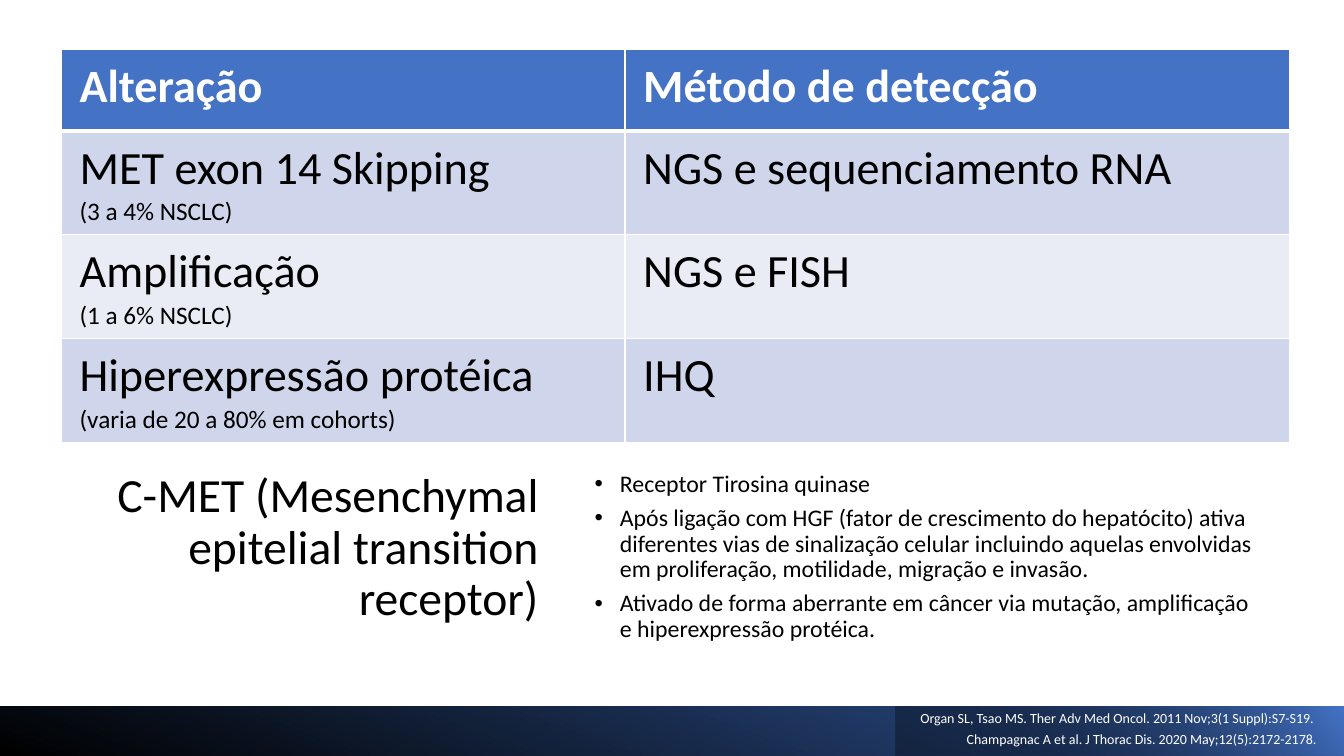
"""Build the C-MET alterations and detection methods slide."""
from dataclasses import dataclass

from lxml.etree import SubElement
from pptx import Presentation
from pptx.dml.color import RGBColor
from pptx.enum.shapes import MSO_SHAPE as Shape
from pptx.enum.text import MSO_AUTO_SIZE as AutoSize, PP_ALIGN as Align
from pptx.oxml import parse_xml
from pptx.oxml.ns import nsdecls, qn
from pptx.util import Inches, Pt


@dataclass(frozen=True)
class Theme:
    font: str = "Calibri"
    black: str = "000000"
    white: str = "FFFFFF"
    blue: str = "4472C4"
    navy: str = "2F5597"
    bands: tuple = ("CFD5EA", "E9EBF5")
    title: int = 34
    table: int = 33
    note: int = 18
    body: int = 17
    citation: int = 10


theme = Theme()


def write(frame, lines, paragraph_format, bullet=None):
    """Fill a text frame with (text, size, color, bold) lines."""
    for index, (text, size, color, bold) in enumerate(lines):
        paragraph = frame.paragraphs[0] if index == 0 else frame.add_paragraph()
        paragraph.text = text
        for name, value in paragraph_format.items():
            setattr(paragraph, name, value)
        if bullet:
            properties = paragraph._p.get_or_add_pPr()
            properties.set("marL", str(Inches(0.31)))
            properties.set("indent", str(Inches(-0.25)))
            SubElement(properties, qn("a:buFont")).set("typeface", "Arial")
            SubElement(properties, qn("a:buChar")).set("char", bullet)
        font = paragraph.runs[0].font
        for name, value in {"name": theme.font, "size": Pt(size), "bold": bold}.items():
            setattr(font, name, value)
        font.color.rgb = RGBColor.from_string(color)


def add_text(box, lines, paragraph_format, bullet=None, auto_size=AutoSize.NONE):
    """Add a wrapped text box at (left, top, width, height)."""
    frame = slide.shapes.add_textbox(*map(Inches, box)).text_frame
    frame.word_wrap = True
    frame.auto_size = auto_size
    write(frame, lines, paragraph_format, bullet)


presentation = Presentation()
presentation.slide_width = Inches(13.33)
presentation.slide_height = Inches(7.5)
slide = presentation.slides.add_slide(presentation.slide_layouts[6])

spaced = {"space_after": Pt(6)}
tight = {"line_spacing": 0.9, **spaced}
add_text(
    (0.9, 4.63, 4.54, 1.97),
    [("C-MET (Mesenchymal epitelial transition receptor)", theme.title, theme.black, False)],
    {"alignment": Align.RIGHT, **tight},
)
facts = [
    "Receptor Tirosina quinase",
    "Após ligação com HGF (fator de crescimento do hepatócito) ativa diferentes vias de "
    "sinalização celular incluindo aquelas envolvidas em proliferação, motilidade, migração e invasão.",
    "Ativado de forma aberrante em câncer via mutação, amplificação e hiperexpressão protéica.",
]
add_text(
    (5.74, 4.63, 6.82, 1.97),
    [(fact, theme.body, theme.black, False) for fact in facts],
    tight,
    bullet="•",
)

footer_bars = [
    (0, 13.33, 110, [(0, theme.black, 100), (1, theme.navy, 100)]),
    (8.88, 4.45, 140, [(0.19, theme.black, 31), (0.99, theme.blue, 100)]),
]
for left, width, angle, stops in footer_bars:
    bar = slide.shapes.add_shape(
        Shape.RECTANGLE, Inches(left), Inches(7.01), Inches(width), Inches(0.49)
    )
    bar.shadow.inherit = False
    bar.line.fill.background()
    bar._element.spPr.xfrm.set("flipH", "1")
    bar.fill.gradient()
    bar.fill.gradient_angle = angle
    for stop, (position, color, opacity) in zip(bar.fill.gradient_stops, stops):
        stop.position = position
        stop.color.rgb = RGBColor.from_string(color)
    for element, (position, color, opacity) in zip(bar._element.xpath(".//a:gs/a:srgbClr"), stops):
        if opacity < 100:
            SubElement(element, qn("a:alpha")).set("val", str(opacity * 1000))

citations = [
    (9.03, 6.99, 4.16, "Organ SL, Tsao MS. Ther Adv Med Oncol. 2011 Nov;3(1 Suppl):S7-S19."),
    (9.49, 7.2, 3.84, "Champagnac A et al. J Thorac Dis. 2020 May;12(5):2172-2178."),
]
for left, top, width, citation in citations:
    add_text(
        (left, top, width, 0.27),
        [(citation, theme.citation, theme.white, False)],
        spaced,
        auto_size=AutoSize.SHAPE_TO_FIT_TEXT,
    )

rows = [
    (["Alteração"], ["Método de detecção"]),
    (["MET exon 14 Skipping", "(3 a 4% NSCLC)"], ["NGS e sequenciamento RNA"]),
    (["Amplificação", "(1 a 6% NSCLC)"], ["NGS e FISH"]),
    (["Hiperexpressão protéica", "(varia de 20 a 80% em cohorts)"], ["IHQ"]),
]
table = slide.shapes.add_table(
    len(rows), 2, Inches(0.61), Inches(0.49), Inches(12.18), Inches(3.9)
).table
for column, width in zip(table.columns, (5.59, 6.59)):
    column.width = Inches(width)
margins = {"margin_left": 0.18, "margin_top": 0.09, "margin_right": 0.18, "margin_bottom": 0.09}
for row_index, row in enumerate(rows):
    header = row_index == 0
    table.rows[row_index].height = Inches(0.81 if header else 1.03)
    fill = theme.blue if header else theme.bands[(row_index - 1) % 2]
    color = theme.white if header else theme.black
    borders = {"L": 1, "R": 1, "T": 3 if row_index == 1 else 1, "B": 3 if header else 1}
    for column_index, texts in enumerate(row):
        cell = table.cell(row_index, column_index)
        for name, value in margins.items():
            setattr(cell, name, Inches(value))
        cell.fill.solid()
        cell.fill.fore_color.rgb = RGBColor.from_string(fill)
        sizes = (theme.table, theme.note)
        write(cell.text_frame, [(text, size, color, header) for text, size in zip(texts, sizes)], {})
        properties = cell._tc.get_or_add_tcPr()
        for position, (side, width) in enumerate(borders.items()):
            properties.insert(position, parse_xml(
                f'<a:ln{side} {nsdecls("a")} w="{Pt(width)}"><a:solidFill>'
                f'<a:srgbClr val="{theme.white}"/></a:solidFill></a:ln{side}>'
            ))

presentation.save("out.pptx")
